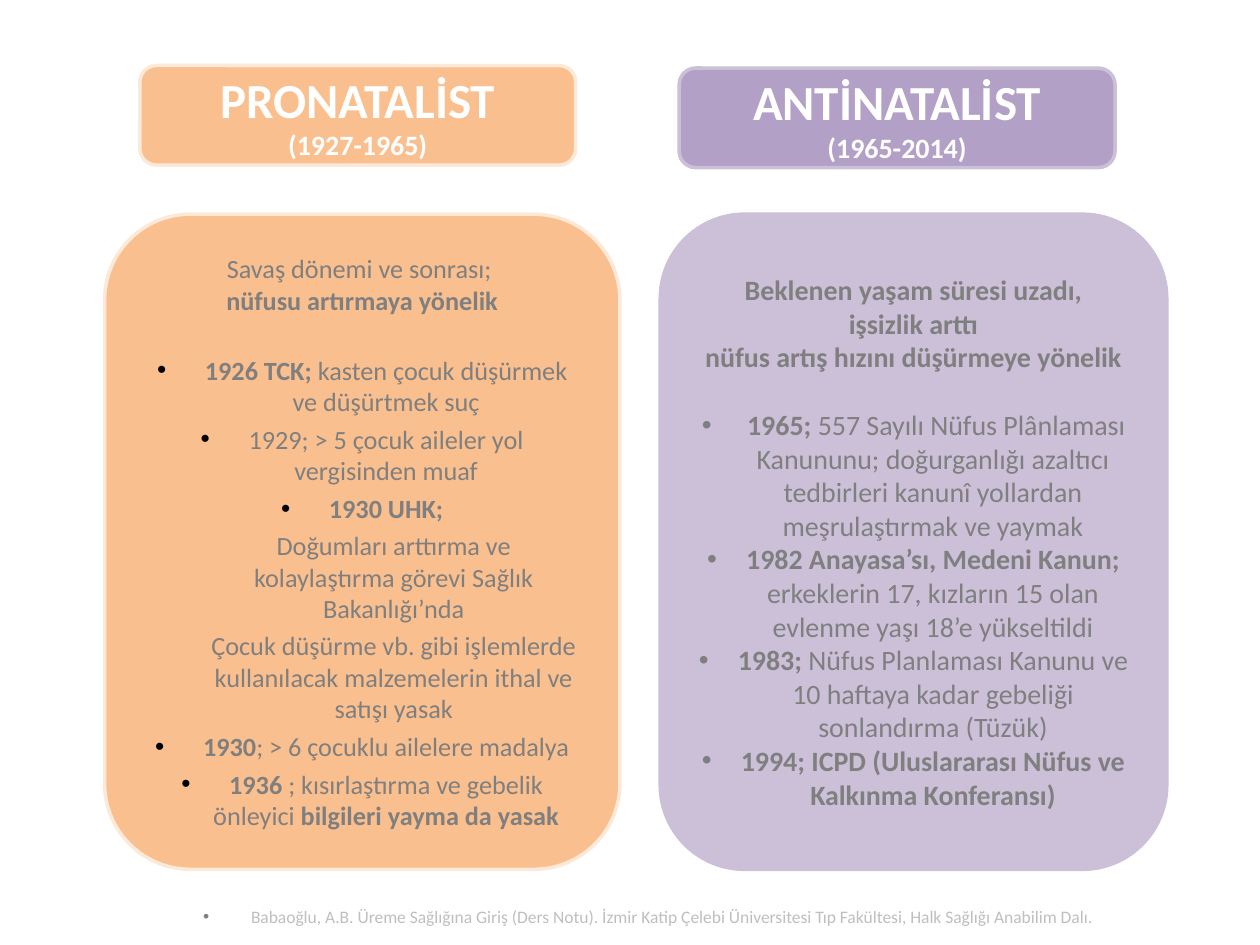
from dataclasses import dataclass
from typing import NamedTuple, Optional

from lxml.etree import SubElement
from pptx import Presentation
from pptx.dml.color import RGBColor
from pptx.enum.shapes import MSO_SHAPE as Shape
from pptx.enum.text import MSO_ANCHOR as Anchor, PP_ALIGN as Align
from pptx.oxml.ns import qn
from pptx.util import Pt

EMU_PER_PX = 9144  # 100 px to the inch
FONT = "Calibri"
WHITE, BLACK, GREY, PALE_GREY = "FFFFFF", "000000", "7F7F7F", "BFBFBF"
ORANGE, PALE_ORANGE = "FABF8E", "FDE9D8"
PURPLE, PALE_PURPLE = "B2A0C7", "CCC0D9"


class Box(NamedTuple):
    left: int
    top: int
    width: int
    height: int


class Span(NamedTuple):
    text: str
    bold: bool = False
    size: Optional[int] = None


@dataclass
class Para:
    spans: list[Span]
    margin: int = 0
    indent: int = 0
    before: float = 0
    bullet: Optional[str] = None


@dataclass
class Card:
    box: Box
    fill: str
    line: str
    color: str
    size: int
    paras: list[Para]


def px(length: int) -> int:
    return length * EMU_PER_PX


def rgb(value: str) -> RGBColor:
    return RGBColor.from_string(value)


def plain(text: str) -> Span:
    return Span(text)


def bold(text: str, size: Optional[int] = None) -> Span:
    return Span(text, True, size)


def pronatalist_item(*spans: Span, before: float = 3.6) -> Para:
    return Para(list(spans), 38, -38, before, BLACK)


def pronatalist_detail(text: str) -> Para:
    return Para([plain(text)], margin=50, before=3.2)


def antinatalist_item(*spans: Span, before: float = 0) -> Para:
    return Para(list(spans), 31, -31, before, GREY)


def add_bullet(properties, color: str) -> None:
    SubElement(SubElement(properties, qn("a:buClr")), qn("a:srgbClr"), val=color)
    SubElement(properties, qn("a:buFont"), typeface="Arial")
    SubElement(properties, qn("a:buChar"), char="•")


def write_paras(frame, paras: list[Para], size: int, color: str) -> None:
    frame.word_wrap = True
    for index, para in enumerate(paras):
        line = frame.add_paragraph() if index else frame.paragraphs[0]
        line.alignment = Align.CENTER
        line.space_before = Pt(para.before)
        properties = line._p.get_or_add_pPr()
        properties.set("marL", str(px(para.margin)))
        properties.set("indent", str(px(para.indent)))
        if para.bullet:
            add_bullet(properties, para.bullet)
        for span in para.spans:
            run = line.add_run()
            run.text = span.text
            run.font.name = FONT
            run.font.size = Pt(span.size or size)
            run.font.bold = span.bold
            run.font.color.rgb = rgb(color)


def add_card(page, card: Card) -> None:
    shape = page.shapes.add_shape(Shape.ROUNDED_RECTANGLE, *map(px, card.box))
    shape.shadow.inherit = False
    shape.fill.solid()
    shape.fill.fore_color.rgb = rgb(card.fill)
    shape.line.color.rgb = rgb(card.line)
    shape.line.width = Pt(2)
    shape.text_frame.vertical_anchor = Anchor.MIDDLE
    write_paras(shape.text_frame, card.paras, card.size, card.color)


def add_source(page, box: Box, para: Para) -> None:
    frame = page.shapes.add_textbox(*map(px, box)).text_frame
    write_paras(frame, [para], 10, PALE_GREY)


def heading(name: str, years: str) -> list[Para]:
    return [Para([bold(name, 28)]), Para([bold(years)])]


PRONATALIST = [
    Para([plain("Savaş dönemi ve sonrası; ")]),
    Para([bold("nüfusu artırmaya yönelik")]),
    pronatalist_item(bold("1926 TCK; "), plain("kasten çocuk düşürmek ve düşürtmek suç"), before=22),
    pronatalist_item(plain("1929; > 5 çocuk aileler yol vergisinden muaf")),
    pronatalist_item(bold("1930 UHK;")),
    pronatalist_detail("Doğumları arttırma ve kolaylaştırma görevi Sağlık Bakanlığı’nda"),
    pronatalist_detail("Çocuk düşürme vb. gibi işlemlerde kullanılacak malzemelerin ithal ve satışı yasak"),
    pronatalist_item(bold("1930"), plain("; > 6 çocuklu ailelere madalya")),
    pronatalist_item(
        bold("1936"),
        plain(" ; kısırlaştırma ve gebelik önleyici "),
        bold("bilgileri yayma da yasak"),
    ),
]
ANTINATALIST = [
    Para([bold("Beklenen yaşam süresi uzadı,")]),
    Para([bold("işsizlik arttı")]),
    Para([bold("nüfus artış hızını düşürmeye yönelik")]),
    antinatalist_item(
        bold(" 1965; "),
        plain(
            "557 Sayılı Nüfus Plânlaması Kanununu; doğurganlığı azaltıcı "
            "tedbirleri kanunî yollardan meşrulaştırmak ve yaymak"
        ),
        before=19.5,
    ),
    antinatalist_item(
        bold("1982 Anayasa’sı, Medeni Kanun; "),
        plain("erkeklerin 17, kızların 15 olan evlenme yaşı 18’e yükseltildi"),
    ),
    antinatalist_item(
        bold("1983; "),
        plain("Nüfus Planlaması Kanunu ve 10 haftaya kadar gebeliği sonlandırma (Tüzük)"),
    ),
    antinatalist_item(bold("1994; ICPD (Uluslararası Nüfus ve Kalkınma Konferansı)")),
]
CARDS = [
    Card(Box(111, 52, 346, 79), ORANGE, PALE_ORANGE, WHITE, 16, heading("PRONATALİST", "(1927-1965)")),
    Card(Box(539, 54, 346, 79), PURPLE, PALE_PURPLE, WHITE, 16, heading("ANTİNATALİST", "(1965-2014)")),
    Card(Box(83, 170, 409, 520), ORANGE, PALE_ORANGE, GREY, 15, PRONATALIST),
    Card(Box(524, 170, 402, 520), PALE_PURPLE, PALE_PURPLE, GREY, 16, ANTINATALIST),
]
SOURCE = Para(
    [plain(
        "Babaoğlu, A.B. Üreme Sağlığına Giriş (Ders Notu). İzmir Katip Çelebi "
        "Üniversitesi Tıp Fakültesi, Halk Sağlığı Anabilim Dalı."
    )],
    38, -38, 2.6, GREY,
)


def main() -> None:
    deck = Presentation()
    deck.slide_width, deck.slide_height = px(1000), px(750)
    page = deck.slides.add_slide(deck.slide_layouts[6])
    for card in CARDS:
        add_card(page, card)
    add_source(page, Box(111, 714, 806, 31), SOURCE)
    deck.save("out.pptx")


if __name__ == "__main__":
    main()
